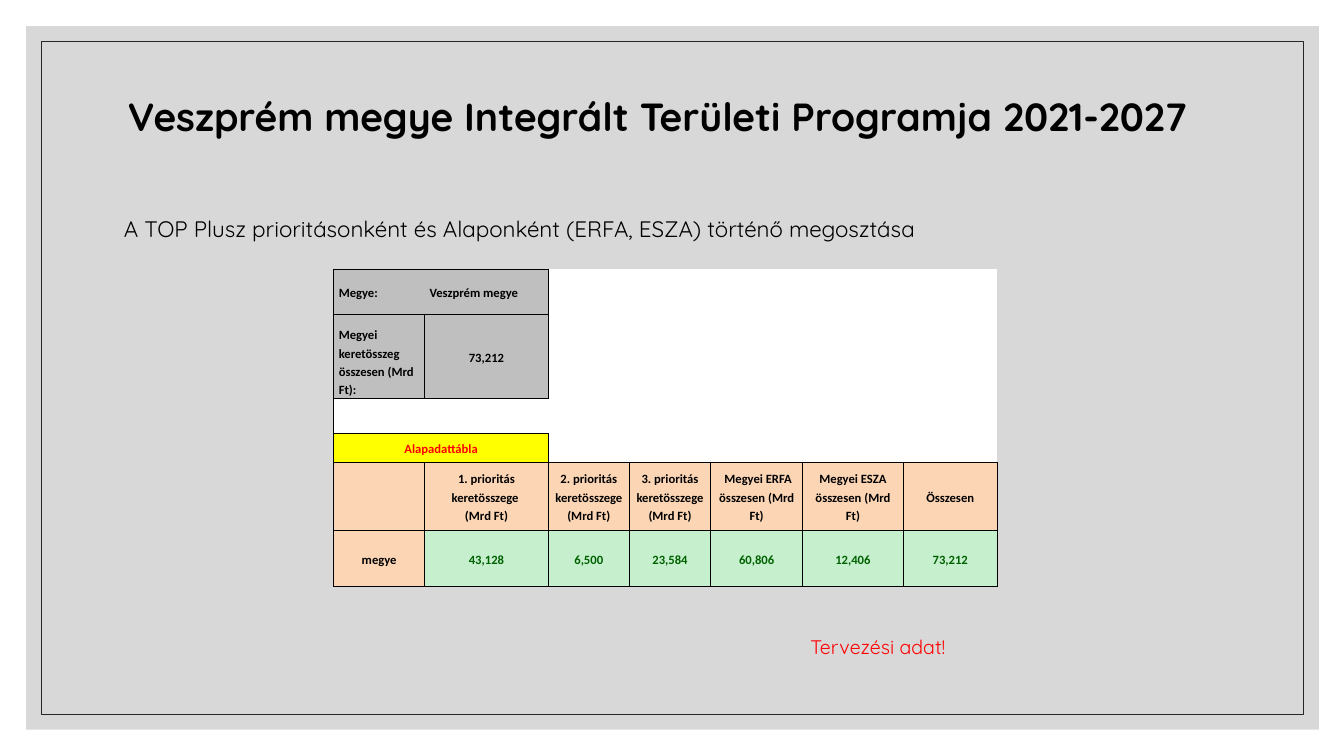
import copy

import lxml.etree
import pptx
import pptx.dml.color
import pptx.enum.shapes
import pptx.enum.text
import pptx.oxml.ns
import pptx.util

Inches = pptx.util.Inches
Pt = pptx.util.Pt
qn = pptx.oxml.ns.qn
MIDDLE = pptx.enum.text.MSO_ANCHOR.MIDDLE
CENTER = pptx.enum.text.PP_ALIGN.CENTER
LEFT = pptx.enum.text.PP_ALIGN.LEFT


def color(hex_string):
    return pptx.dml.color.RGBColor.from_string(hex_string)


def write(paragraph, text, font_color, **font_format):
    """Fill a paragraph, giving its runs and line breaks the same format."""
    paragraph.text = text
    for run in paragraph.runs:
        run.font.color.rgb = color(font_color)
        for name, value in font_format.items():
            setattr(run.font, name, value)
    for line_break in paragraph._p.findall(qn("a:br")):
        line_break.append(copy.deepcopy(paragraph.runs[0]._r.rPr))


presentation = pptx.Presentation()
presentation.slide_width = Inches(13.33)
presentation.slide_height = Inches(7.5)
slide = presentation.slides.add_slide(presentation.slide_layouts[6])

# Grey panel and thin frame
panel, frame = [
    slide.shapes.add_shape(
        pptx.enum.shapes.MSO_SHAPE.RECTANGLE, *map(Inches, bounds))
    for bounds in [(0.26, 0.26, 12.82, 6.98), (0.41, 0.41, 12.52, 6.68)]
]
panel.shadow.inherit = frame.shadow.inherit = False
panel.fill.solid()
panel.fill.fore_color.rgb = color("BFBFBF")
panel_color = panel._element.spPr.find(".//" + qn("a:srgbClr"))
lxml.etree.SubElement(panel_color, qn("a:alpha"), val="60000")
panel.line.fill.background()
frame.fill.background()
frame.line.color.rgb = color("262626")
frame.line.width = Pt(0.5)

# Title, subtitle and note
texts = [
    ("Veszprém megye Integrált Területi Programja 2021-2027",
     (1.17, 0.7, 11, 0.96), 28, "000000", True, 0.9),
    ("A TOP Plusz prioritásonként és Alaponként (ERFA, ESZA) történő megosztása",
     (1.13, 2.09, 8.76, 0.37), 16, "000000", False, 1.0),
    ("Tervezési adat!", (7.94, 6.25, 1.95, 0.34), 14, "FF0000", False, 1.0),
]
for text, bounds, size, font_color, bold, line_spacing in texts:
    text_frame = slide.shapes.add_textbox(*map(Inches, bounds)).text_frame
    text_frame.word_wrap = True
    text_frame.vertical_anchor = MIDDLE if bold else pptx.enum.text.MSO_ANCHOR.TOP
    paragraph = text_frame.paragraphs[0]
    paragraph.line_spacing = line_spacing
    write(paragraph, text, font_color, size=Pt(size), name="Quicksand", bold=bold)

# Budget table
column_widths = [0.9, 1.23, 0.8, 0.81, 0.91, 1, 0.93]
row_heights = [0.45, 0.83, 0.35, 0.29, 0.67, 0.56]
GREY, WHITE, YELLOW = "BFBFBF", "FFFFFF", "FFFF00"
PEACH, GREEN = "FCD5B4", "C6EFCE"
cell_texts = [
    ["Megye:", "Veszprém megye"],
    ["Megyei keretösszeg összesen (Mrd Ft):", "73,212"],
    [],
    ["Alapadattábla"],
    ["", "1. prioritás keretösszege \n(Mrd Ft)",
     "2. prioritás keretösszege (Mrd Ft)", "3. prioritás keretösszege (Mrd Ft)",
     " Megyei ERFA összesen (Mrd Ft)", "Megyei ESZA összesen (Mrd Ft)", "Összesen"],
    ["megye", "43,128", "6,500", "23,584", "60,806", "12,406", "73,212"],
]
row_fills = [
    [GREY] * 2 + [WHITE] * 5,
    [GREY] * 2 + [WHITE] * 5,
    [WHITE] * 7,
    [YELLOW] * 2 + [WHITE] * 5,
    [PEACH] * 7,
    [PEACH] + [GREEN] * 6,
]
# Sides of each cell that carry a line
row_borders = [
    ["LTB", "TRB", "L"] + [""] * 4,
    ["LRTB", "LRTB", "L"] + [""] * 4,
    ["LTB", "TB"] + [""] * 5,
    ["LRTB", "LRTB", "LB"] + ["B"] * 4,
    ["LRTB"] * 7,
    ["LRTB"] * 7,
]
font_colors = {YELLOW: "FF0000", GREEN: "006100"}

graphic_frame = slide.shapes.add_table(
    len(row_heights), len(column_widths), Inches(3.31), Inches(2.67),
    Inches(sum(column_widths)), Inches(sum(row_heights)))
table = graphic_frame.table
table.first_row = table.horz_banding = False
for column, width in zip(table.columns, column_widths):
    column.width = Inches(width)
for row, height in zip(table.rows, row_heights):
    row.height = Inches(height)
table.cell(0, 4).merge(table.cell(0, 5))
table.cell(3, 0).merge(table.cell(3, 1))

cell_format = {
    "margin_left": Inches(0.05), "margin_right": Inches(0.05),
    "margin_top": 0, "margin_bottom": 0, "vertical_anchor": MIDDLE,
}
for row_index, (fills, borders) in enumerate(zip(row_fills, row_borders)):
    for column_index, (fill, sides) in enumerate(zip(fills, borders)):
        cell = table.cell(row_index, column_index)
        for name, value in cell_format.items():
            setattr(cell, name, value)
        for side in "LRTB":
            line = lxml.etree.SubElement(
                cell._tc.tcPr, qn("a:ln" + side), w=str(Pt(1)))
            if side in sides:
                solid = lxml.etree.SubElement(line, qn("a:solidFill"))
                lxml.etree.SubElement(solid, qn("a:srgbClr"), val="000000")
            else:
                lxml.etree.SubElement(line, qn("a:noFill"))
        cell.fill.solid()
        cell.fill.fore_color.rgb = color(fill)

        paragraph = cell.text_frame.paragraphs[0]
        texts_in_row = cell_texts[row_index]
        text = texts_in_row[column_index] if column_index < len(texts_in_row) else ""
        if text:
            left_aligned = row_index == 0 or (row_index, column_index) == (1, 0)
            paragraph.alignment = LEFT if left_aligned else CENTER
            paragraph.line_spacing = 1.2
            paragraph.space_after = Pt(10)
            write(paragraph, text, font_colors.get(fill, "000000"),
                  size=Pt(9), name="Calibri", bold=True)
        else:
            lxml.etree.SubElement(paragraph._p, qn("a:endParaRPr"), sz="900")
table.cell(1, 0).vertical_anchor = pptx.enum.text.MSO_ANCHOR.BOTTOM

presentation.save("out.pptx")
